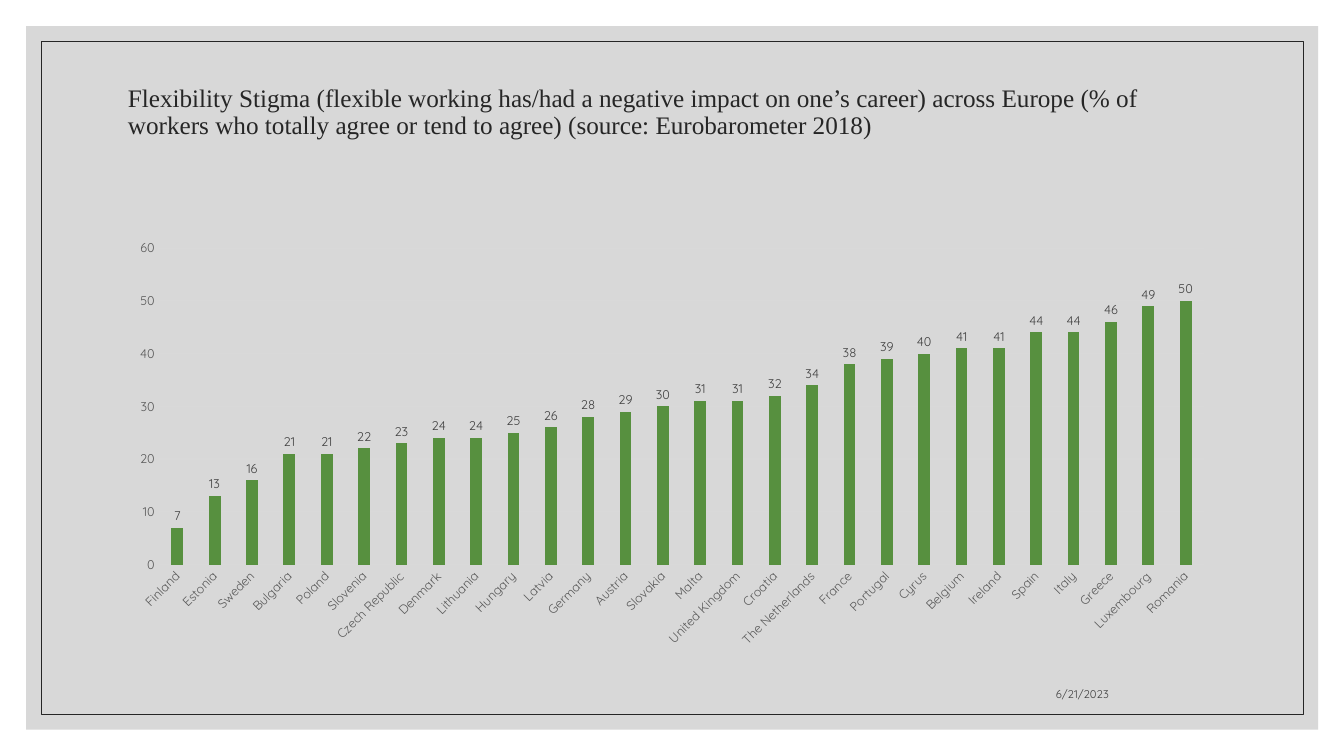
from dataclasses import dataclass

from lxml import etree
from pptx import Presentation
from pptx import util as u
from pptx.chart import data as cd
from pptx.dml.color import RGBColor
from pptx.enum import chart as ec
from pptx.enum import shapes, text
from pptx.oxml.ns import qn


@dataclass(frozen=True)
class Theme:
    panel: str = "BFBFBF"
    ink: str = "262626"
    note: str = "404040"
    axis: str = "595959"
    rule: str = "D9D9D9"
    bar: str = "57903F"
    serif: str = "Times New Roman"
    sans: str = "Quicksand"
    title: float = 18
    tick: float = 9
    date: float = 8


@dataclass(frozen=True)
class Box:
    left: float
    top: float
    width: float
    height: float

    def cm(self) -> tuple:
        return tuple(u.Cm(n) for n in (self.left, self.top, self.width, self.height))


@dataclass(frozen=True)
class Frame:
    box: Box
    fill: str = ""
    alpha: int = 100
    line: str = ""


@dataclass(frozen=True)
class Rate:
    land: str
    share: int


THEME = Theme()
TITLE = Box(2.97, 1.78, 27.94, 3.81)
DATE = Box(20.17, 16.76, 8.03, 1.02)
CHART = Box(2.97, 5.84, 27.94, 10.69)
FRAMES = (
    Frame(Box(0.66, 0.66, 32.56, 17.73), fill=THEME.panel, alpha=60),
    Frame(Box(1.04, 1.04, 31.8, 16.97), line=THEME.ink),
)
RATES = [Rate(*row) for row in (
    ("Finland", 7), ("Estonia", 13), ("Sweden", 16), ("Bulgaria", 21),
    ("Poland", 21), ("Slovenia", 22), ("Czech Republic", 23), ("Denmark", 24),
    ("Lithuania", 24), ("Hungary", 25), ("Latvia", 26), ("Germany", 28),
    ("Austria", 29), ("Slovakia", 30), ("Malta", 31), ("United Kingdom", 31),
    ("Croatia", 32), ("The Netherlands", 34), ("France", 38), ("Portugal", 39),
    ("Cyrus", 40), ("Belgium", 41), ("Ireland", 41), ("Spain", 44),
    ("Italy", 44), ("Greece", 46), ("Luxembourg", 49), ("Romania", 50),
)]


def style(font, name: str, size: float, color: str) -> None:
    font.name, font.size, font.bold = name, u.Pt(size), False
    font.color.rgb = RGBColor.from_string(color)


def write(shape, words: str, *, font: str, size: float, color: str,
          align=text.PP_ALIGN.LEFT, anchor=text.MSO_ANCHOR.TOP,
          space: float = 1.0, inset: float = 0.13) -> None:
    """Fill a shape with one formatted paragraph; inset is the top margin in cm."""
    body = shape.text_frame
    body.word_wrap, body.auto_size = True, text.MSO_AUTO_SIZE.NONE
    body.vertical_anchor, body.margin_top = anchor, u.Cm(inset)
    para = body.paragraphs[0]
    para.alignment, para.line_spacing = align, space
    run = para.add_run()
    run.text = words
    style(run.font, font, size, color)


def stroke(line, color: str, width: float) -> None:
    line.color.rgb = RGBColor.from_string(color)
    line.width = u.Pt(width)


def draw(slide, frame: Frame) -> None:
    """Add a frame behind the title."""
    rect = slide.shapes.add_shape(shapes.MSO_SHAPE.RECTANGLE, *frame.box.cm())
    rect.shadow.inherit = False
    if frame.fill:
        rect.fill.solid()
        rect.fill.fore_color.rgb = RGBColor.from_string(frame.fill)
        tint = rect._element.spPr.find(".//" + qn("a:srgbClr"))
        etree.SubElement(tint, qn("a:alpha"), val=str(frame.alpha * 1000))
    else:
        rect.fill.background()
    if frame.line:
        stroke(rect.line, frame.line, 0.5)
    else:
        rect.line.fill.background()
    slide.shapes.title._element.addprevious(rect._element)


def plot(slide) -> None:
    data = cd.CategoryChartData(number_format="#,##0")
    data.categories = [rate.land for rate in RATES]
    data.add_series("Series 1", [rate.share for rate in RATES])
    kind = ec.XL_CHART_TYPE.COLUMN_CLUSTERED
    chart = slide.shapes.add_chart(kind, *CHART.cm(), data).chart
    chart.has_legend = chart.has_title = False
    style(chart.font, THEME.sans, 10, "000000")

    lands, shares = chart.category_axis, chart.value_axis
    for axis in (lands, shares):
        axis.major_tick_mark = axis.minor_tick_mark = ec.XL_TICK_MARK.NONE
        style(axis.tick_labels.font, THEME.sans, THEME.tick, THEME.axis)
    stroke(lands.format.line, THEME.rule, 0.75)
    lands._element.find(".//" + qn("a:bodyPr")).set("rot", str(-45 * 60000))
    shares.minimum_scale, shares.maximum_scale, shares.major_unit = 0, 60, 10
    shares.format.line.fill.background()
    stroke(shares.major_gridlines.format.line, THEME.rule, 0.75)

    bars = chart.plots[0]
    bars.gap_width, bars.overlap, bars.vary_by_categories = 219, -27, False
    fill = bars.series[0].format.fill
    fill.solid()
    fill.fore_color.rgb = RGBColor.from_string(THEME.bar)
    bars.has_data_labels = True
    tags = bars.data_labels
    tags.show_value, tags.position = True, ec.XL_LABEL_POSITION.OUTSIDE_END
    tags.number_format, tags.number_format_is_linked = "#,##0", False
    style(tags.font, THEME.sans, THEME.tick, THEME.note)


def main() -> None:
    deck = Presentation()
    deck.slide_width, deck.slide_height = u.Cm(33.87), u.Cm(19.05)
    slide = deck.slides.add_slide(deck.slide_layouts[5])
    for frame in FRAMES:
        draw(slide, frame)

    title = slide.shapes.title
    title.left, title.top, title.width, title.height = TITLE.cm()
    write(title, "Flexibility Stigma (flexible working has/had a negative impact on "
          "one’s career) across Europe (% of workers who totally agree or tend to "
          "agree) (source: Eurobarometer 2018)",
          font=THEME.serif, size=THEME.title, color=THEME.ink, space=0.9, inset=0.38)
    write(slide.shapes.add_textbox(*DATE.cm()), "6/21/2023",
          font=THEME.sans, size=THEME.date, color=THEME.note,
          align=text.PP_ALIGN.RIGHT, anchor=text.MSO_ANCHOR.BOTTOM)
    plot(slide)
    deck.save("out.pptx")


if __name__ == "__main__":
    main()
